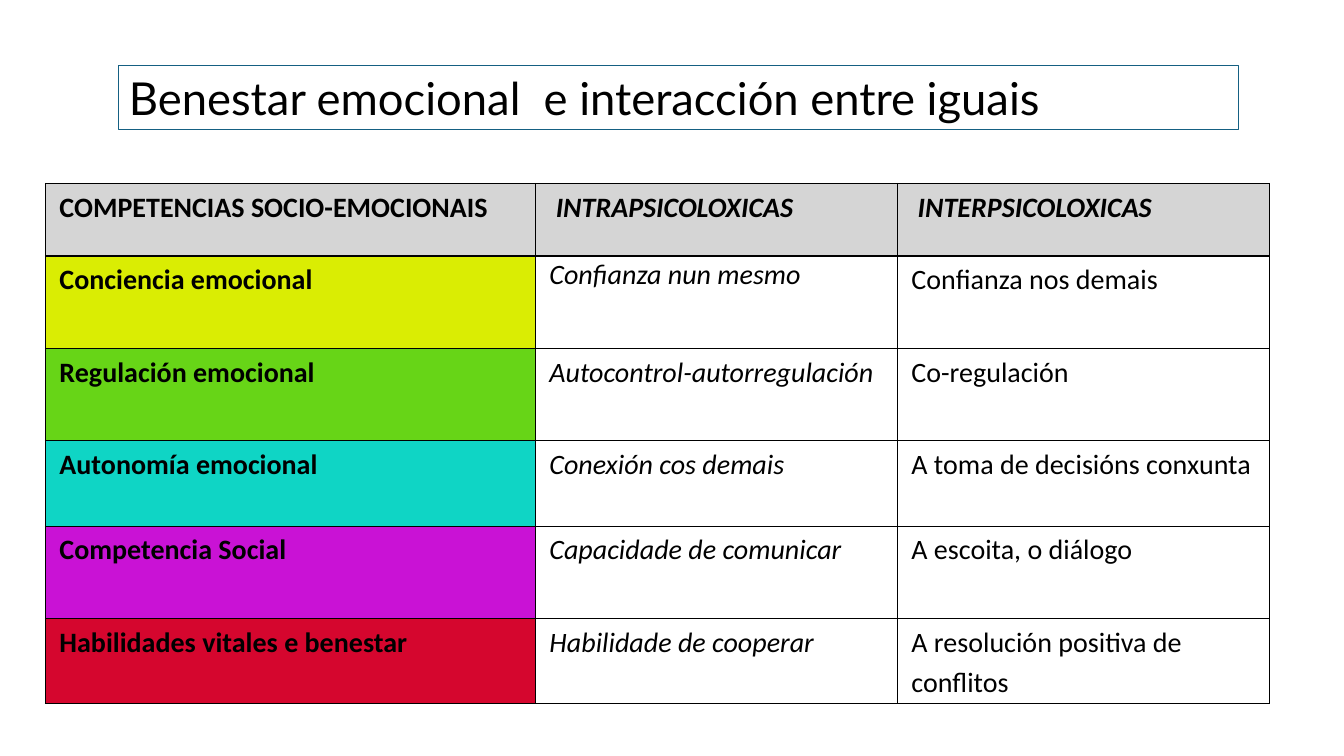
from lxml.etree import SubElement
from pptx import Presentation
from pptx.dml.color import RGBColor
from pptx.enum.shapes import MSO_SHAPE
from pptx.enum.text import MSO_ANCHOR, PP_ALIGN
from pptx.oxml.ns import qn
from pptx.util import Inches, Pt

HEADINGS = ("COMPETENCIAS SOCIO-EMOCIONAIS", " INTRAPSICOLOXICAS", " INTERPSICOLOXICAS")
COMPETENCES = (
    ("Conciencia emocional", "Confianza nun mesmo", "Confianza nos demais", "DAED03"),
    ("Regulación emocional", "Autocontrol-autorregulación", "Co-regulación", "67D517"),
    ("Autonomía emocional", "Conexión cos demais", "A toma de decisións conxunta", "0FD5C5"),
    ("Competencia Social", "Capacidade de comunicar", "A escoita, o diálogo", "C912D5"),
    ("Habilidades vitales e benestar", "Habilidade de cooperar",
     "A resolución positiva de conflitos", "D5062E"),
)
HEADING_FILL = "D5D5D5"
COLUMN_WIDTHS = (4.86, 3.59, 3.69)
ROW_HEIGHTS = (0.72, 0.92, 0.91, 0.85, 0.92, 0.84)


def color(hex_code):
    """Return the RGB colour for a hex string."""
    return RGBColor.from_string(hex_code)


def write_text(frame, text, font="Calibri", size=20, bold=False, italic=False,
               line_spacing=1.15, space_after=8):
    """Write one left-aligned black paragraph with the given format."""
    frame.word_wrap = True
    paragraph = frame.paragraphs[0]
    paragraph.alignment = PP_ALIGN.LEFT
    paragraph.line_spacing = line_spacing
    paragraph.space_after = Pt(space_after)
    run = paragraph.add_run()
    run.text = text
    run.font.name = font
    run.font.size = Pt(size)
    run.font.bold = bold
    run.font.italic = italic
    run.font.color.rgb = color("000000")


def add_title(slide, text):
    """Add the outlined title box."""
    title = slide.shapes.add_shape(
        MSO_SHAPE.RECTANGLE, Inches(1.18), Inches(0.65), Inches(11.1), Inches(0.64))
    title.shadow.inherit = False
    title.fill.background()
    title.line.color.rgb = color("156082")
    title.line.width = Pt(0.75)
    title.text_frame.vertical_anchor = MSO_ANCHOR.BOTTOM
    write_text(title.text_frame, text, font="Lato", size=32.4,
               line_spacing=0.9, space_after=0)


def add_borders(cell, hex_code="000000", width=1):
    """Draw a line on all four sides of a cell."""
    properties = cell._tc.get_or_add_tcPr()
    for side in ("a:lnL", "a:lnR", "a:lnT", "a:lnB"):
        border = SubElement(properties, qn(side), w=str(Pt(width)))
        SubElement(SubElement(border, qn("a:solidFill")), qn("a:srgbClr"), val=hex_code)


def fill_cell(cell, text, fill=None, **text_format):
    """Set a cell's margins, borders, fill and text."""
    cell.margin_left = cell.margin_right = Inches(0.14)
    cell.margin_top, cell.margin_bottom = Inches(0.02), Inches(0)
    add_borders(cell)
    if fill:
        cell.fill.solid()
        cell.fill.fore_color.rgb = color(fill)
    else:
        cell.fill.background()
    write_text(cell.text_frame, text, **text_format)


def add_competence_table(slide):
    """Add the table of socio-emotional competences."""
    table = slide.shapes.add_table(
        len(ROW_HEIGHTS), len(COLUMN_WIDTHS), Inches(0.45), Inches(1.82),
        Inches(sum(COLUMN_WIDTHS)), Inches(sum(ROW_HEIGHTS))).table
    for column, width in zip(table.columns, COLUMN_WIDTHS):
        column.width = Inches(width)
    for row, height in zip(table.rows, ROW_HEIGHTS):
        row.height = Inches(height)
    for index, heading in enumerate(HEADINGS):
        fill_cell(table.cell(0, index), heading, HEADING_FILL, bold=True, italic=index > 0)
    for index, (competence, intra, inter, fill) in enumerate(COMPETENCES, start=1):
        intra_spacing = {"line_spacing": 1, "space_after": 0} if index == 1 else {}
        fill_cell(table.cell(index, 0), competence, fill, bold=True)
        fill_cell(table.cell(index, 1), intra, italic=True, **intra_spacing)
        fill_cell(table.cell(index, 2), inter)


def main():
    """Build and save the slide."""
    presentation = Presentation()
    presentation.slide_width = Inches(13.33)
    presentation.slide_height = Inches(7.5)
    slide = presentation.slides.add_slide(presentation.slide_layouts[6])
    add_title(slide, "Benestar emocional  e interacción entre iguais")
    add_competence_table(slide)
    presentation.save("out.pptx")


if __name__ == "__main__":
    main()
